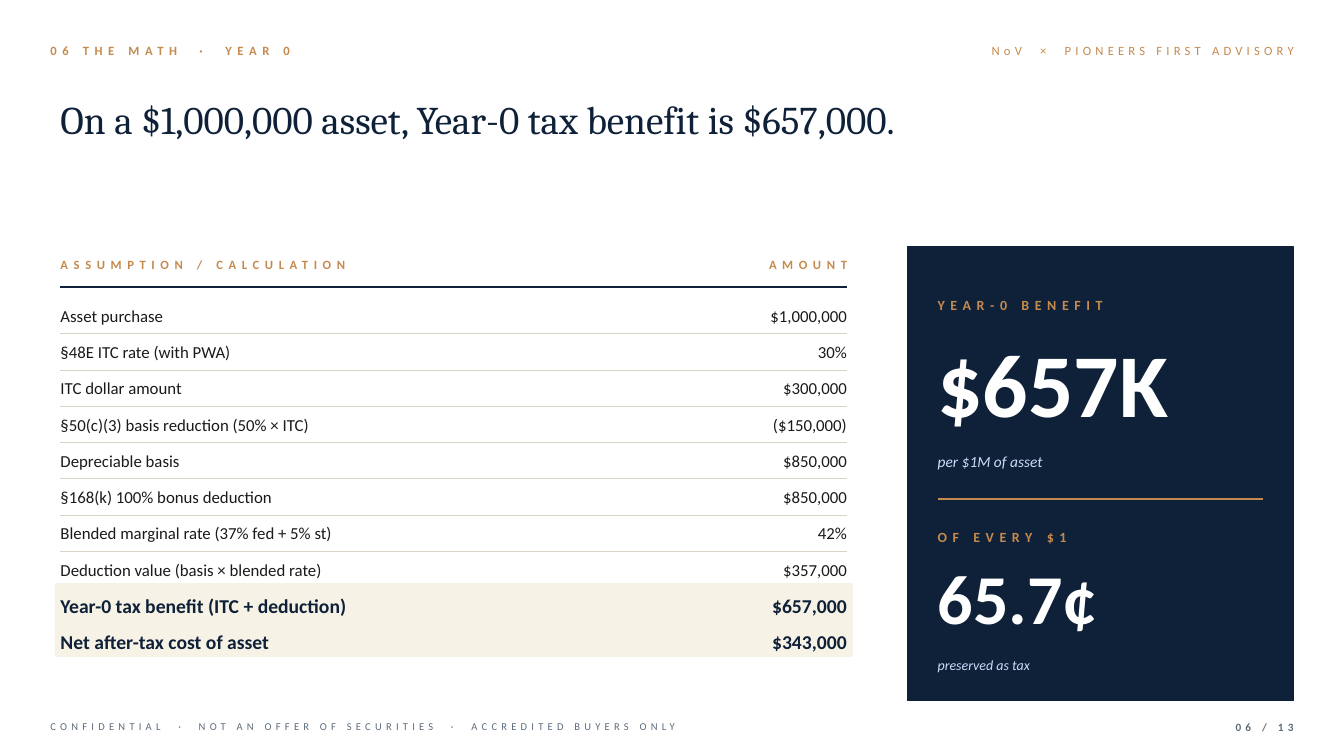
from pptx import Presentation
from pptx.dml.color import RGBColor
from pptx.enum.shapes import MSO_CONNECTOR as Connector, MSO_SHAPE as Shape
from pptx.enum.text import MSO_ANCHOR as Anchor, MSO_AUTO_SIZE as AutoSize, PP_ALIGN as Align
from pptx.oxml import parse_xml
from pptx.oxml.ns import nsdecls, qn
from pptx.util import Inches, Pt

NAVY = RGBColor(0x0E, 0x21, 0x38)
COPPER = RGBColor(0xC5, 0x8A, 0x4E)
INK = RGBColor(0x1A, 0x1A, 0x1A)
CREAM = RGBColor(0xF7, 0xF2, 0xE6)
RULE = RGBColor(0xD9, 0xD2, 0xC7)
WHITE = RGBColor(0xFF, 0xFF, 0xFF)
ICE = RGBColor(0xCA, 0xDC, 0xFC)
SLATE = RGBColor(0x5D, 0x6B, 0x7C)
NO_STYLE = "{2D5ABB26-0587-4C30-8999-92F81FD0307C}"


def write_text(frame, text, size, color, font="Calibri", bold=False, italic=False,
               spacing=0, align=Align.LEFT, separator="·"):
    """Fill the frame with one paragraph; spaces around a separator are widened."""
    para = frame.paragraphs[0]
    para.alignment = align
    gap = (" ", 2 * spacing + 2)
    for index, piece in enumerate(text.split(f" {separator} ")):
        parts = [gap, (separator, spacing), gap] if index else []
        for words, tracking in parts + [(piece, spacing)]:
            span = para.add_run()
            span.text = words
            span.font.size = Pt(size)
            span.font.name = font
            span.font.bold = bold
            span.font.italic = italic
            span.font.color.rgb = color
            if tracking:
                span.font._element.set("spc", str(tracking * 100))


def add_box(left, top, width, height, text, anchor=Anchor.MIDDLE, **text_format):
    box = slide.shapes.add_textbox(Inches(left), Inches(top), Inches(width), Inches(height))
    frame = box.text_frame
    frame.word_wrap = True
    frame.vertical_anchor = anchor
    frame.margin_left = frame.margin_right = frame.margin_top = frame.margin_bottom = 0
    write_text(frame, text, **text_format)


deck = Presentation()
deck.slide_width = Inches(13.33)
deck.slide_height = Inches(7.5)
slide = deck.slides.add_slide(deck.slide_layouts[5])
slide.background.fill.solid()
slide.background.fill.fore_color.rgb = WHITE

# Header and title
add_box(0.5, 0.35, 7.5, 0.3, "06 THE MATH · YEAR 0", size=9, color=COPPER, bold=True, spacing=4)
add_box(7.5, 0.35, 5.33, 0.3, "NoV × PIONEERS FIRST ADVISORY", size=9, color=COPPER,
        spacing=3, align=Align.RIGHT, separator="×")

title = slide.shapes.title
title.left, title.top, title.width, title.height = map(Inches, (0.6, 0.95, 12.13, 1.2))
title_frame = title.text_frame
title_frame.auto_size = AutoSize.NONE
title_frame.word_wrap = True
title_frame.vertical_anchor = Anchor.TOP
title_frame.margin_left = title_frame.margin_right = 0
title_frame.margin_top = title_frame.margin_bottom = 0
write_text(title_frame, "On a $1,000,000 asset, Year-0 tax benefit is $657,000.",
           size=28, color=NAVY, font="Cambria")

# Calculation rows
heading = ("ASSUMPTION / CALCULATION", "AMOUNT")
calculations = [
    ("Asset purchase", "$1,000,000"),
    ("§48E ITC rate (with PWA)", "30%"),
    ("ITC dollar amount", "$300,000"),
    ("§50(c)(3) basis reduction (50% × ITC)", "($150,000)"),
    ("Depreciable basis", "$850,000"),
    ("§168(k) 100% bonus deduction", "$850,000"),
    ("Blended marginal rate (37% fed + 5% st)", "42%"),
    ("Deduction value (basis × blended rate)", "$357,000"),
]
totals = [
    ("Year-0 tax benefit (ITC + deduction)", "$657,000"),
    ("Net after-tax cost of asset", "$343,000"),
]
label = dict(color=COPPER, bold=True, spacing=4)
rows = [(heading, dict(label, size=9))]
rows += [(texts, dict(size=12, color=INK)) for texts in calculations]
rows += [(texts, dict(size=14, color=NAVY, bold=True)) for texts in totals]
HEAD_TOP, HEAD_HEIGHT, ROW_HEIGHT = 2.45, 0.5, 0.36
first_row_top = HEAD_TOP + HEAD_HEIGHT
totals_top = first_row_top + len(calculations) * ROW_HEIGHT

# Bands behind the totals, and the benefit panel
blocks = [(0.55, totals_top - 0.04 + index * ROW_HEIGHT, 7.9, ROW_HEIGHT, CREAM)
          for index in range(len(totals))]
blocks.append((9, 2.45, 3.83, 4.5, NAVY))
for left, top, width, height, color in blocks:
    block = slide.shapes.add_shape(Shape.RECTANGLE, Inches(left), Inches(top),
                                   Inches(width), Inches(height))
    block.shadow.inherit = False
    block.fill.solid()
    block.fill.fore_color.rgb = color
    block.line.color.rgb = color
    block.line.width = Pt(1)

# Calculation table
table = slide.shapes.add_table(
    len(rows), 2, Inches(0.6), Inches(HEAD_TOP), Inches(7.8),
    Inches(HEAD_HEIGHT + (len(rows) - 1) * ROW_HEIGHT)).table
table.first_row = table.horz_banding = False
table._tbl.tblPr.find(qn("a:tableStyleId")).text = NO_STYLE
table.columns[0].width = Inches(5.07)
table.columns[1].width = Inches(2.73)

for row_index, (texts, text_format) in enumerate(rows):
    is_head = row_index == 0
    table.rows[row_index].height = Inches(HEAD_HEIGHT if is_head else ROW_HEIGHT)
    for column, (text, align) in enumerate(zip(texts, (Align.LEFT, Align.RIGHT))):
        cell = table.cell(row_index, column)
        cell.vertical_anchor = Anchor.MIDDLE
        cell.margin_left = cell.margin_right = 0
        cell.margin_top = Inches(0.02)
        cell.margin_bottom = Inches(0.15 if is_head else 0)
        cell.fill.background()
        write_text(cell.text_frame, text, align=align, **text_format)

# Rules under the heading, between the calculations, and in the panel
rules = [(0.6, 8.4, 2.85, NAVY, 1.5), (9.3, 12.53, 4.95, COPPER, 1)]
rules += [(0.6, 8.4, first_row_top + number * ROW_HEIGHT, RULE, 0.5)
          for number in range(1, len(calculations))]
for left, right, height, color, points in rules:
    rule = slide.shapes.add_connector(Connector.STRAIGHT, Inches(left), Inches(height),
                                      Inches(right), Inches(height))
    rule.line.color.rgb = color
    rule.line.width = Pt(points)
    rule._element.spPr.append(parse_xml(f'<a:effectLst {nsdecls("a")}/>'))

# Panel text
panel_label = dict(label, size=10)
figure = dict(color=WHITE, bold=True, anchor=Anchor.TOP)
caption = dict(color=ICE, italic=True)
for top, height, text, text_format in [
    (2.85, 0.35, "YEAR-0 BENEFIT", panel_label),
    (3.25, 1.2, "$657K", dict(figure, size=64)),
    (4.4, 0.35, "per $1M of asset", dict(caption, size=11)),
    (5.15, 0.35, "OF EVERY $1", panel_label),
    (5.5, 1, "65.7¢", dict(figure, size=50)),
    (6.45, 0.3, "preserved as tax", dict(caption, size=10)),
]:
    add_box(9.3, top, 3.23, height, text, **text_format)

# Footer
add_box(0.5, 7.1, 9.5, 0.22,
        "CONFIDENTIAL · NOT AN OFFER OF SECURITIES · ACCREDITED BUYERS ONLY",
        size=7.5, color=SLATE, spacing=3)
add_box(11.93, 7.1, 0.9, 0.22, "06 / 13", size=8, color=SLATE, bold=True, spacing=3,
        align=Align.RIGHT)

deck.save("out.pptx")
